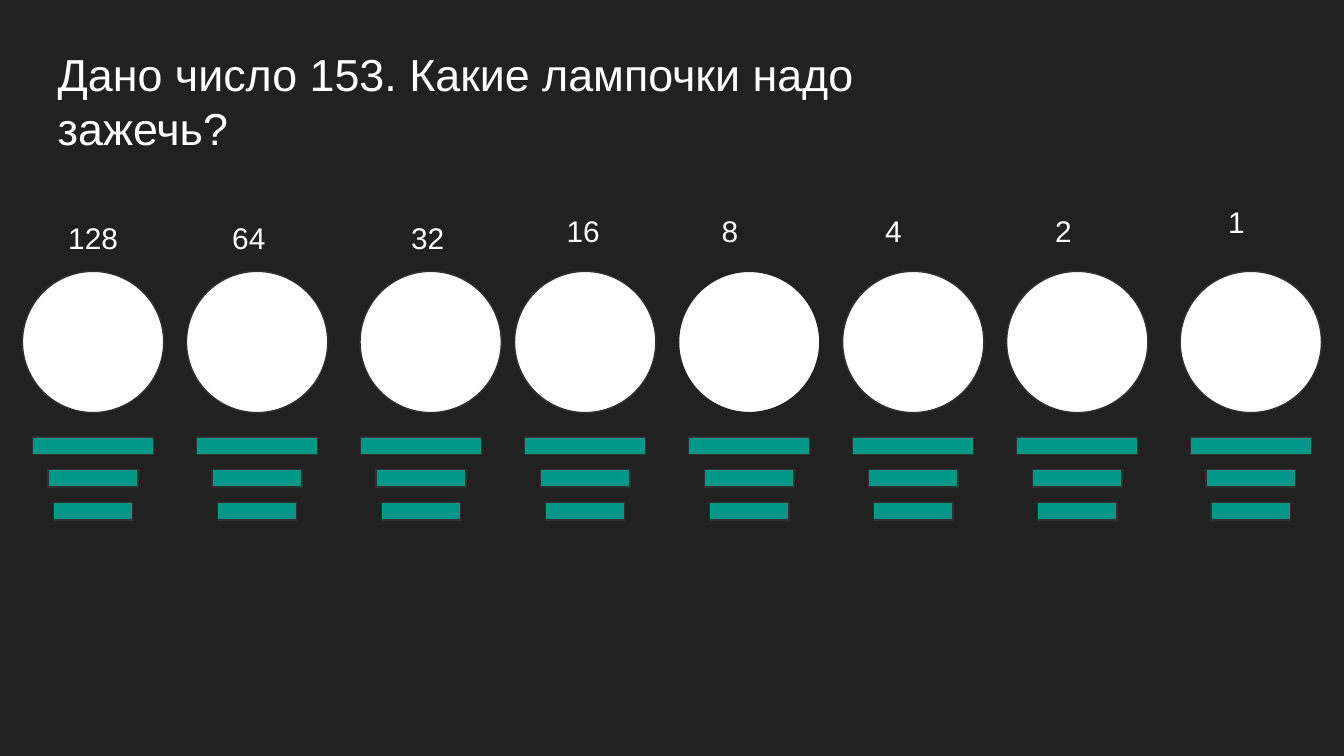
"""Build a slide that asks which binary lamps to light for 153."""
import dataclasses

import pptx
import pptx.dml.color
import pptx.enum.shapes
import pptx.enum.text
import pptx.util

Cm = pptx.util.Cm
Pt = pptx.util.Pt
Kind = pptx.enum.shapes.MSO_SHAPE


@dataclasses.dataclass(frozen=True)
class Theme:
    back: str = "212121"
    edge: str = "303030"
    base: str = "009688"
    white: str = "FFFFFF"
    font: str = "Arial"
    title: int = 24
    label: int = 16


def add_shape(kind, left, top, width, height, fill, edge):
    shape = slide.shapes.add_shape(kind, Cm(left), Cm(top), Cm(width), Cm(height))
    shape.shadow.inherit = False
    shape.fill.solid()
    shape.fill.fore_color.rgb = pptx.dml.color.RGBColor.from_string(fill)
    shape.line.color.rgb = pptx.dml.color.RGBColor.from_string(edge)
    shape.line.width = Pt(0.75)


def add_text(text, left, top, width, height, size):
    frame = slide.shapes.add_textbox(Cm(left), Cm(top), Cm(width), Cm(height)).text_frame
    pad = Cm(0.25)
    form = {
        "margin_left": pad, "margin_top": pad, "margin_right": pad, "margin_bottom": pad,
        "word_wrap": True, "auto_size": pptx.enum.text.MSO_AUTO_SIZE.SHAPE_TO_FIT_TEXT,
    }
    for name, value in form.items():
        setattr(frame, name, value)
    run = frame.paragraphs[0].add_run()
    run.text = text
    for name, value in {"size": Pt(size), "name": theme.font}.items():
        setattr(run.font, name, value)
    run.font.color.rgb = pptx.dml.color.RGBColor.from_string(theme.white)


theme = Theme()
deck = pptx.Presentation()
deck.slide_width, deck.slide_height = Cm(25.4), Cm(14.29)
slide = deck.slides.add_slide(deck.slide_layouts[6])
slide.background.fill.solid()
slide.background.fill.fore_color.rgb = pptx.dml.color.RGBColor.from_string(theme.back)

pitch, start, bulb = 3.1, 1.76, 2.67
bars = [2.29, 1.7, 1.5]
shift = 0.18
lamps = [
    ("128", 1.04, 3.91, 2.95, 0, 0, theme.edge),
    ("64", 4.14, 3.91, 2.31, 0, 0, theme.edge),
    ("32", 7.52, 3.91, 2.06, shift, 0, theme.edge),
    ("16", 10.46, 3.78, 2.06, 0, 0, theme.edge),
    ("8", 13.39, 3.78, 1.52, 0, 0, theme.back),
    ("4", 16.48, 3.78, 1.52, 0, 0, theme.edge),
    ("2", 19.69, 3.78, 1.52, 0, 0, theme.edge),
    ("1", 22.96, 3.61, 1.52, shift, shift, theme.edge),
]

for col, (text, left, top, width, nudge, slide_by, edge) in enumerate(lamps):
    mid = start + col * pitch
    for row, bar in enumerate(bars):
        add_shape(Kind.RECTANGLE, mid + slide_by - bar / 2, 8.26 + row * 0.62,
                  bar, 0.33, theme.base, theme.edge)
    add_shape(Kind.OVAL, mid + nudge - bulb / 2, 5.13, bulb, bulb, theme.white, edge)
    add_text(text, left, top, width, 1.19, theme.label)

add_text("Дано число 153. Какие лампочки надо зажечь?", 0.84, 0.64, 18.77, 2.57, theme.title)

deck.save("out.pptx")
